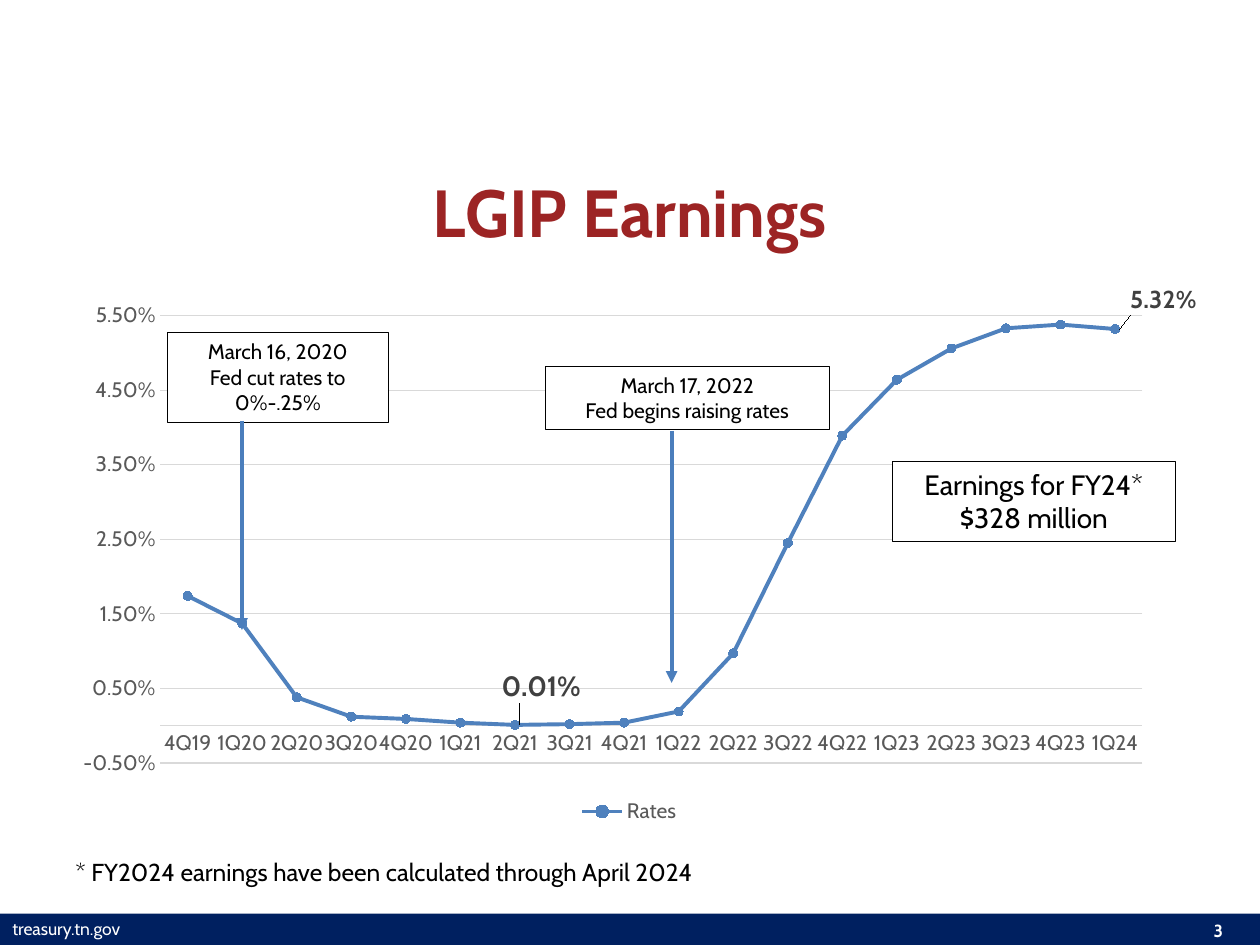
from dataclasses import dataclass

from lxml.etree import SubElement
from pptx import Presentation
from pptx.chart.data import CategoryChartData
from pptx.dml.color import RGBColor
from pptx.enum.chart import XL_CHART_TYPE as CHART, XL_LABEL_POSITION as LABEL
from pptx.enum.chart import XL_LEGEND_POSITION as LEGEND, XL_MARKER_STYLE as MARKER
from pptx.enum.chart import XL_TICK_MARK as TICK
from pptx.enum.shapes import MSO_CONNECTOR, MSO_SHAPE
from pptx.enum.text import MSO_ANCHOR as ANCHOR, PP_ALIGN as ALIGN
from pptx.oxml import parse_xml
from pptx.oxml.ns import nsdecls, qn
from pptx.util import Inches, Pt


@dataclass(frozen=True)
class Theme:
    """Colours, font and type sizes of the slide."""
    font: str = "Cabin"
    red: str = "9C2424"
    navy: str = "002060"
    blue: str = "4F81BD"
    arrow: str = "4B7EBC"
    grid: str = "D9D9D9"
    grey: str = "595959"
    dark: str = "404040"
    black: str = "000000"
    white: str = "FFFFFF"
    title: int = 38
    big: int = 16
    note: int = 14
    text: int = 12
    small: int = 10


T = Theme()
RATES = {
    "4Q19": 0.0174, "1Q20": 0.0137, "2Q20": 0.0038, "3Q20": 0.0012,
    "4Q20": 0.0009, "1Q21": 0.0004, "2Q21": 0.0001, "3Q21": 0.0002,
    "4Q21": 0.0004, "1Q22": 0.0019, "2Q22": 0.0097, "3Q22": 0.0245,
    "4Q22": 0.0389, "1Q23": 0.0464, "2Q23": 0.0506, "3Q23": 0.0533,
    "4Q23": 0.0538, "1Q24": 0.0532,
}


def rgb(value):
    """Return a colour from its hex text."""
    return RGBColor.from_string(value)


def style(font, size, color, bold=False):
    """Set face, size, colour and weight of a font."""
    font.name, font.size, font.bold = T.font, Pt(size), bold
    font.color.rgb = rgb(color)


def write(tf, text, size=T.text, color=T.black, bold=False, align=ALIGN.LEFT,
          anchor=ANCHOR.TOP):
    """Fill a text frame, one paragraph a line."""
    tf.word_wrap = True
    tf.vertical_anchor = anchor
    tf.text = text
    for p in tf.paragraphs:
        p.alignment = align
        for r in p.runs:
            style(r.font, size, color, bold)


def add_text(slide, box, text, **fmt):
    """Add a text box."""
    sp = slide.shapes.add_textbox(*map(Inches, box))
    write(sp.text_frame, text, **fmt)


def add_box(slide, box, fill, line=None):
    """Add a filled rectangle with an optional thin outline."""
    sp = slide.shapes.add_shape(MSO_SHAPE.RECTANGLE, *map(Inches, box))
    sp.shadow.inherit = False
    sp.fill.solid()
    sp.fill.fore_color.rgb = rgb(fill)
    if line:
        sp.line.color.rgb = rgb(line)
        sp.line.width = Pt(0.25)
    else:
        sp.line.fill.background()
    return sp


def add_callout(slide, box, text, size=T.text):
    """Add a white outlined box with centred text."""
    sp = add_box(slide, box, T.white, T.black)
    write(sp.text_frame, text, size=size, align=ALIGN.CENTER)


def add_down_arrow(slide, x, top, bottom):
    """Add a vertical arrow that points down."""
    cx = slide.shapes.add_connector(
        MSO_CONNECTOR.STRAIGHT, *map(Inches, (x, top, x, bottom)))
    cx.line.color.rgb = rgb(T.arrow)
    cx.line.width = Pt(2.25)
    sp_pr = cx._element.spPr
    SubElement(sp_pr.get_or_add_ln(), qn("a:tailEnd"), type="triangle")
    SubElement(sp_pr, qn("a:effectLst"))


def manual_layout(**parts):
    """Return a chart layout element with the given parts."""
    items = "".join(f'<c:{k} val="{v}"/>' for k, v in parts.items())
    return parse_xml(f'<c:layout {nsdecls("c")}><c:manualLayout>{items}'
                     '</c:manualLayout></c:layout>')


def add_point_label(series, index, size, dx, dy):
    """Label one point, moved by a share of the chart size."""
    label = series.points[index].data_label
    style(label.font, size, T.dark, bold=True)
    label.position = LABEL.RIGHT
    d_lbl = series._element.xpath(f".//c:dLbl[c:idx/@val={index}]")[0]
    d_lbl.insert(1, manual_layout(x=dx, y=dy))


def format_axes(chart):
    """Set scale, grid and type of both axes."""
    cat, val = chart.category_axis, chart.value_axis
    for axis in (cat, val):
        axis.major_tick_mark = axis.minor_tick_mark = TICK.NONE
        style(axis.tick_labels.font, T.text, T.grey)
    val.minimum_scale, val.maximum_scale, val.major_unit = -0.005, 0.055, 0.01
    val.tick_labels.number_format = "0.00%"
    val.tick_labels.number_format_is_linked = False
    val.format.line.fill.background()
    for line in (cat.format.line, val.major_gridlines.format.line):
        line.color.rgb = rgb(T.grid)
        line.width = Pt(0.75)


def add_rate_chart(slide, box):
    """Add the line chart of quarterly rates."""
    data = CategoryChartData(number_format="0.00%")
    data.categories = list(RATES)
    data.add_series("Rates", list(RATES.values()))
    chart = slide.shapes.add_chart(
        CHART.LINE_MARKERS_STACKED, *map(Inches, box), data).chart
    style(chart.font, T.small, T.black)
    chart.has_title = False
    chart.has_legend = True
    chart.legend.position = LEGEND.BOTTOM
    chart.legend.include_in_layout = False
    style(chart.legend.font, T.text, T.grey)
    format_axes(chart)

    plot = chart.plots[0]
    plot.vary_by_categories = False
    area = chart._chartSpace.chart.plotArea
    for old in area.findall(qn("c:layout")):
        area.remove(old)
    area.insert(0, manual_layout(layoutTarget="inner", xMode="edge", yMode="edge",
                                 x=0.086, y=0.059, w=0.867, h=0.82))

    series = plot.series[0]
    series.smooth = False
    series.format.line.color.rgb = rgb(T.blue)
    series.format.line.width = Pt(2.25)
    marker = series.marker
    marker.style, marker.size = MARKER.CIRCLE, 5
    marker.format.fill.solid()
    marker.format.fill.fore_color.rgb = rgb(T.blue)
    marker.format.line.color.rgb = rgb(T.blue)
    series.data_labels.show_value = False
    add_point_label(series, 6, T.big, -0.02, -0.07)
    add_point_label(series, 17, T.note, 0.005, -0.053)


def main():
    """Build the slide and save it."""
    prs = Presentation()
    prs.slide_width, prs.slide_height = Inches(10), Inches(7.5)
    slide = prs.slides.add_slide(prs.slide_layouts[5])

    add_box(slide, (0, 7.25, 10, 0.25), T.navy)
    add_text(slide, (0, 7.24, 1.83, 0.27), "treasury.tn.gov",
             size=T.small, color=T.white)
    add_text(slide, (9.42, 7.25, 0.5, 0.27), "3", size=T.small, color=T.white,
             bold=True, align=ALIGN.CENTER)

    title = slide.shapes.title
    title.left, title.top, title.width, title.height = map(Inches, (0.5, 1.17, 9, 1))
    write(title.text_frame, "LGIP Earnings", size=T.title, color=T.red, bold=True,
          align=ALIGN.CENTER, anchor=ANCHOR.MIDDLE)

    add_rate_chart(slide, (0.5, 2.25, 9, 4.33))
    add_callout(slide, (1.33, 2.64, 1.75, 0.71),
                "March 16, 2020\nFed cut rates to\n0%-.25%")
    add_callout(slide, (4.33, 2.91, 2.25, 0.5),
                "March 17, 2022\nFed begins raising rates")
    add_down_arrow(slide, 1.92, 3.34, 5)
    add_down_arrow(slide, 5.33, 3.42, 5.42)
    add_callout(slide, (7.08, 3.66, 2.25, 0.64),
                "Earnings for FY24*\v$328 million", size=T.big)
    add_text(slide, (0.5, 6.75, 8.67, 0.34),
             "* FY2024 earnings have been calculated through April 2024", size=T.note)
    prs.save("out.pptx")


if __name__ == "__main__":
    main()
